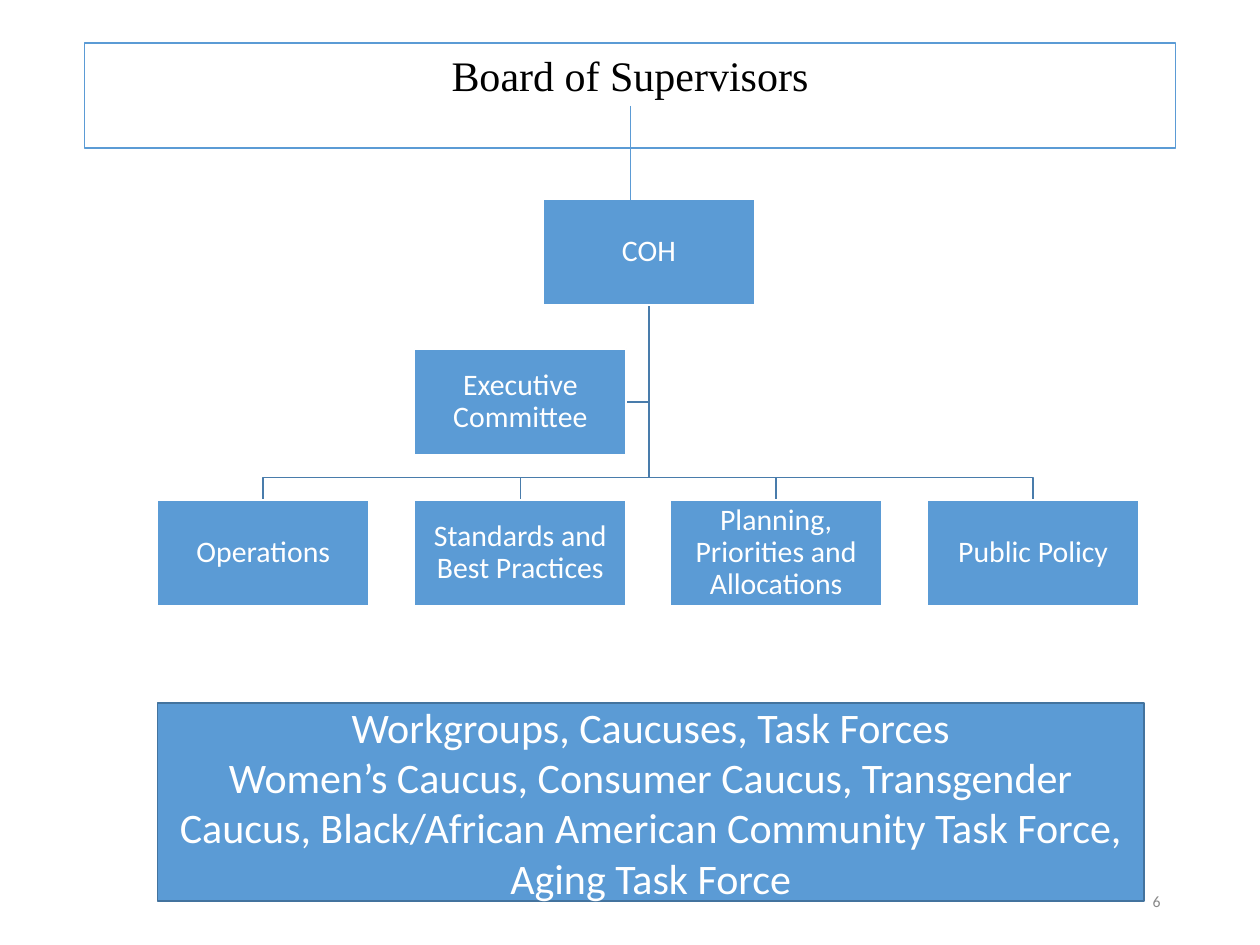
from dataclasses import dataclass

from lxml import etree
from pptx import Presentation
from pptx.dml.color import RGBColor
from pptx.enum.shapes import MSO_CONNECTOR, MSO_SHAPE
from pptx.enum.text import MSO_ANCHOR, MSO_AUTO_SIZE, PP_ALIGN
from pptx.oxml.ns import qn
from pptx.util import Pt

RECTANGLE = MSO_SHAPE.RECTANGLE
STRAIGHT = MSO_CONNECTOR.STRAIGHT
TOP, MIDDLE = MSO_ANCHOR.TOP, MSO_ANCHOR.MIDDLE
GROW = MSO_AUTO_SIZE.SHAPE_TO_FIT_TEXT
CENTER, RIGHT = PP_ALIGN.CENTER, PP_ALIGN.RIGHT
BOTTOM_SITE = 2
EMU_PER_PX = 9144  # 100 px to the inch

NODE_WIDTH, NODE_HEIGHT = 168, 84
COH_LEFT, COH_TOP = 431, 158
EXECUTIVE_LEFT, EXECUTIVE_TOP = 329, 277
COMMITTEE_LEFT, COMMITTEE_TOP, COMMITTEE_SPAN = 125, 397, 611
BRANCH_Y = 379
COMMITTEES = [
    "Operations",
    "Standards and Best Practices",
    "Planning, Priorities and Allocations",
    "Public Policy",
]
GROUPS = [
    "Workgroups, Caucuses, Task Forces",
    "Women’s Caucus, Consumer Caucus, Transgender Caucus, "
    "Black/African American Community Task Force, Aging Task Force",
]


@dataclass(frozen=True)
class Theme:
    blue: RGBColor = RGBColor(0x5B, 0x9B, 0xD5)
    branch: RGBColor = RGBColor(0x49, 0x7C, 0xAB)
    edge: RGBColor = RGBColor(0x43, 0x73, 0x9E)
    white: RGBColor = RGBColor(0xFF, 0xFF, 0xFF)
    black: RGBColor = RGBColor(0, 0, 0)
    grey: RGBColor = RGBColor(0x89, 0x89, 0x89)
    body_font: str = "Calibri"
    title_font: str = "Times New Roman"
    large: int = 24
    node: int = 17
    small: int = 9


THEME = Theme()


def px(length):
    return round(length * EMU_PER_PX)


def place(shape, *box):
    for name, length in zip(("left", "top", "width", "height"), box):
        setattr(shape, name, px(length))


def set_line(shape, color, width):
    shape.line.color.rgb = color
    shape.line.width = Pt(width)


def write(shape, paragraphs, size, color, font=THEME.body_font,
          align=CENTER, spacing=1.0, **frame_format):
    frame = shape.text_frame
    frame.text = "\n".join(paragraphs)
    frame_values = {"word_wrap": True, "vertical_anchor": MIDDLE, **frame_format}
    for name, value in frame_values.items():
        setattr(frame, name, value)
    for paragraph in frame.paragraphs:
        paragraph.alignment = align
        paragraph.line_spacing = spacing
        for name, value in {"size": Pt(size), "name": font}.items():
            setattr(paragraph.font, name, value)
        paragraph.font.color.rgb = color


def add_title(slide, text):
    title = slide.shapes.title
    place(title, 67, 34, 866, 50)
    set_line(title, THEME.blue, 0.75)
    write(title, [text], THEME.large, THEME.black, THEME.title_font,
          vertical_anchor=TOP, auto_size=GROW)
    return title


def add_box(slide, box, edge, paragraphs, size, **text_format):
    rectangle = slide.shapes.add_shape(RECTANGLE, *map(px, box))
    rectangle.shadow.inherit = False
    rectangle.fill.solid()
    rectangle.fill.fore_color.rgb = THEME.blue
    set_line(rectangle, edge, 1)
    write(rectangle, paragraphs, size, THEME.white, **text_format)


def add_node(slide, left, top, name):
    insets = {f"margin_{side}": px(1) for side in ("left", "top", "right", "bottom")}
    add_box(slide, (left, top, NODE_WIDTH, NODE_HEIGHT), THEME.white,
            [name], THEME.node, spacing=0.9, **insets)


def add_branch(slide, start, *corners):
    """Draw an open line from start through the corners."""
    builder = slide.shapes.build_freeform(*start, scale=EMU_PER_PX)
    builder.add_line_segments(corners, close=False)
    branch = builder.convert_to_shape()
    branch.shadow.inherit = False
    branch.fill.background()
    set_line(branch, THEME.branch, 1)


def add_chart_of_committees(slide):
    trunk_x = COH_LEFT + NODE_WIDTH // 2
    trunk = (trunk_x, COH_TOP + NODE_HEIGHT)
    executive_y = EXECUTIVE_TOP + NODE_HEIGHT // 2
    step = COMMITTEE_SPAN / (len(COMMITTEES) - 1)
    lefts = [COMMITTEE_LEFT + round(i * step) for i in range(len(COMMITTEES))]

    add_branch(slide, trunk, (trunk_x, executive_y),
               (EXECUTIVE_LEFT + NODE_WIDTH, executive_y))
    for left in lefts:
        center = left + NODE_WIDTH // 2
        add_branch(slide, trunk, (trunk_x, BRANCH_Y), (center, BRANCH_Y),
                   (center, COMMITTEE_TOP))

    add_node(slide, COH_LEFT, COH_TOP, "COH")
    for left, committee in zip(lefts, COMMITTEES):
        add_node(slide, left, COMMITTEE_TOP, committee)
    add_node(slide, EXECUTIVE_LEFT, EXECUTIVE_TOP, "Executive Committee")


def add_page_number(slide, number):
    page = slide.shapes.add_textbox(*map(px, (706, 695, 225, 40)))
    write(page, [number], THEME.small, THEME.grey, align=RIGHT)


def add_arrow_from(slide, board):
    arrow = slide.shapes.add_connector(STRAIGHT, *map(px, (500, 85, 500, 175)))
    arrow.begin_connect(board, BOTTOM_SITE)
    set_line(arrow, THEME.blue, 0.5)
    line = arrow.line._get_or_add_ln()
    etree.SubElement(line, qn("a:tailEnd"), type="triangle")
    etree.SubElement(arrow._element.spPr, qn("a:effectLst"))


def main():
    deck = Presentation()
    deck.slide_width, deck.slide_height = px(1000), px(750)
    slide = deck.slides.add_slide(deck.slide_layouts[5])
    board = add_title(slide, "Board of Supervisors")
    add_chart_of_committees(slide)
    add_box(slide, (125, 558, 783, 157), THEME.edge, GROUPS, THEME.large)
    add_page_number(slide, "6")
    add_arrow_from(slide, board)
    deck.save("out.pptx")


if __name__ == "__main__":
    main()
